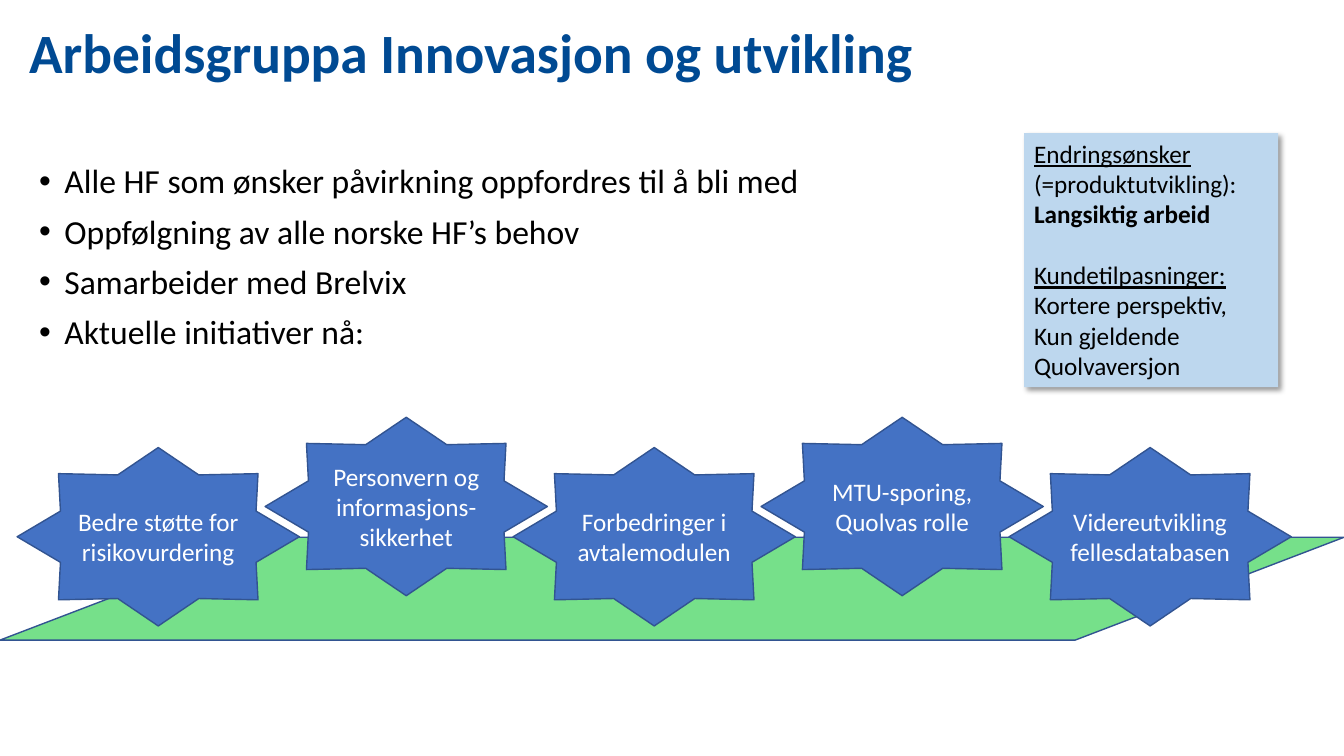
from dataclasses import dataclass
from typing import Optional

from lxml import etree
from pptx import Presentation
from pptx.dml.color import RGBColor
from pptx.enum.shapes import MSO_SHAPE
from pptx.enum.text import MSO_ANCHOR, PP_ALIGN
from pptx.oxml.ns import qn
from pptx.util import Inches, Pt

BAND, STAR, RECT = MSO_SHAPE.FLOWCHART_DATA, MSO_SHAPE.STAR_8_POINT, MSO_SHAPE.RECTANGLE
TOP, MIDDLE = MSO_ANCHOR.TOP, MSO_ANCHOR.MIDDLE
LEFT, CENTER = PP_ALIGN.LEFT, PP_ALIGN.CENTER

NAVY = RGBColor(0x00, 0x4A, 0x93)
BLACK = RGBColor(0x00, 0x00, 0x00)
WHITE = RGBColor(0xFF, 0xFF, 0xFF)
GREEN = RGBColor(0x76, 0xE0, 0x8A)
BLUE = RGBColor(0x44, 0x72, 0xC4)
OUTLINE = RGBColor(0x32, 0x54, 0x91)
PALE_BLUE = RGBColor(0xBD, 0xD7, 0xEE)
FONT = "Calibri"

prs = Presentation()
prs.slide_width, prs.slide_height = Inches(13.33), Inches(7.5)
s = prs.slides.add_slide(prs.slide_layouts[6])


@dataclass
class Box:
    """Place and size in percent of the slide's width and height."""
    x: float
    y: float
    w: float
    h: float

    def emu(self) -> tuple:
        pw, ph = prs.slide_width / 100, prs.slide_height / 100
        return round(self.x * pw), round(self.y * ph), round(self.w * pw), round(self.h * ph)


@dataclass
class Run:
    text: str
    bold: bool = False
    underline: bool = False


@dataclass
class Initiative:
    text: str
    raised: bool


def write(sp, paragraphs: list, *, size: float, color: RGBColor, align=LEFT,
          anchor=TOP, spacing: Optional[float] = None, bullet: bool = False,
          before: Optional[dict] = None) -> None:
    """Fill a shape with paragraphs, each a list of runs."""
    tf = sp.text_frame
    tf.word_wrap = True
    tf.vertical_anchor = anchor
    for i, runs in enumerate(paragraphs):
        p = tf.paragraphs[0] if i == 0 else tf.add_paragraph()
        p.alignment = align
        if spacing:
            p.line_spacing = spacing
        if before and i in before:
            p.space_before = Pt(before[i])
        if bullet:
            ppr = p._p.get_or_add_pPr()
            ppr.set("marL", str(Inches(0.25)))
            ppr.set("indent", str(-Inches(0.25)))
            etree.SubElement(ppr, qn("a:buFont")).set("typeface", "Arial")
            etree.SubElement(ppr, qn("a:buChar")).set("char", "•")
        for run in runs:
            r = p.add_run()
            r.text = run.text
            r.font.name, r.font.size = FONT, Pt(size)
            r.font.color.rgb = color
            r.font.bold, r.font.underline = run.bold, run.underline


def add_shape(kind, box: Box, fill: RGBColor, line: Optional[RGBColor] = None):
    sp = s.shapes.add_shape(kind, *box.emu())
    sp.shadow.inherit = False
    sp.fill.solid()
    sp.fill.fore_color.rgb = fill
    if line is None:
        sp.line.fill.background()
    else:
        sp.line.color.rgb = line
        sp.line.width = Pt(1)
    return sp


def add_shadow(sp) -> None:
    effects = sp._element.spPr.find(qn("a:effectLst"))
    shadow = etree.SubElement(effects, qn("a:outerShdw"), blurRad=str(Pt(4)),
                              dist=str(Pt(3)), dir=str(45 * 60000), algn="tl", rotWithShape="0")
    color = etree.SubElement(shadow, qn("a:srgbClr"), val=str(BLACK))
    etree.SubElement(color, qn("a:alpha"), val="40000")


# Green band behind the stars
add_shape(BAND, Box(0, 71.07, 100, 13.6), GREEN, OUTLINE)

# Title
title = s.shapes.add_textbox(*Box(1.43, 2.67, 70.3, 11.87).emu())
write(title, [[Run("Arbeidsgruppa Innovasjon og utvikling", bold=True)]],
      size=39.6, color=NAVY, spacing=0.9)

# Bullet list
BULLETS = [
    "Alle HF som ønsker påvirkning oppfordres til å bli med",
    "Oppfølgning av alle norske HF’s behov",
    "Samarbeider med Brelvix",
    "Aktuelle initiativer nå:",
]
body = s.shapes.add_textbox(*Box(2.18, 21.13, 75.3, 34).emu())
write(body, [[Run(text)] for text in BULLETS], size=24, color=BLACK, spacing=0.9,
      bullet=True, before={i: 10 for i in range(1, len(BULLETS))})

# Note with shadow
NOTE = [
    [Run("Endringsønsker ", underline=True), Run("(=produktutvikling):")],
    [Run("Langsiktig arbeid", bold=True)],
    [Run("Kundetilpasninger:", underline=True)],
    [Run("Kortere perspektiv,")],
    [Run("Kun gjeldende Quolvaversjon")],
]
note = add_shape(RECT, Box(76.2, 17.6, 18.9, 33.6), PALE_BLUE)
add_shadow(note)
write(note, NOTE, size=18, color=BLACK, before={2: 22})

# Row of stars, every second one raised
INITIATIVES = [
    Initiative("Bedre støtte for risikovurdering", False),
    Initiative("Personvern og informasjons-sikkerhet", True),
    Initiative("Forbedringer i avtalemodulen", False),
    Initiative("MTU-sporing, Quolvas rolle", True),
    Initiative("Videreutvikling fellesdatabasen", False),
]
STAR_LEFT, STAR_STEP, STAR_TOP, STAR_RAISE = 1.28, 18.45, 59.2, 4
for i, item in enumerate(INITIATIVES):
    y = STAR_TOP - STAR_RAISE * item.raised
    star = add_shape(STAR, Box(STAR_LEFT + i * STAR_STEP, y, 21, 23.6), BLUE, OUTLINE)
    write(star, [[Run(item.text)]], size=18, color=WHITE, align=CENTER, anchor=MIDDLE)

prs.save("out.pptx")
